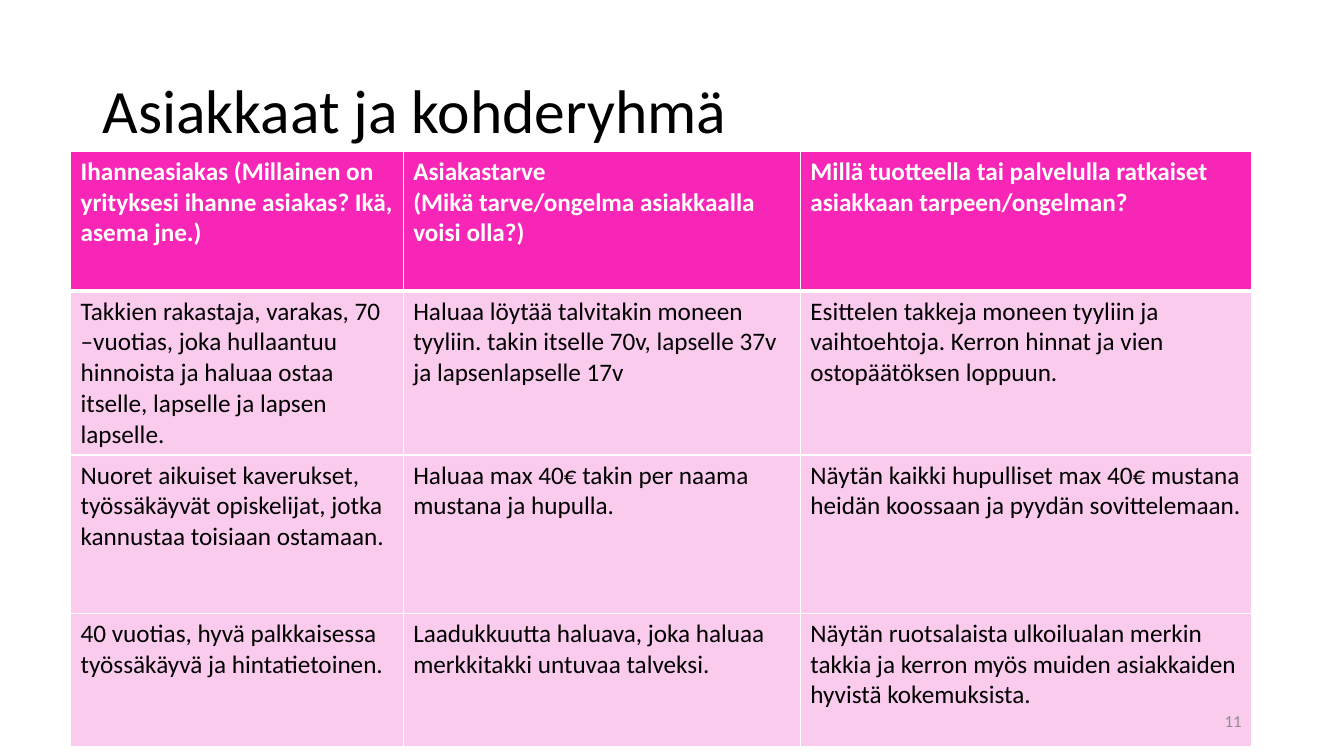
from lxml.etree import SubElement
from pptx import Presentation
from pptx.dml.color import RGBColor
from pptx.enum.text import MSO_ANCHOR, PP_ALIGN
from pptx.oxml.ns import qn
from pptx.util import Pt

WHITE = RGBColor(0xFF, 0xFF, 0xFF)
BLACK = RGBColor(0x00, 0x00, 0x00)
GREY = RGBColor(0x8C, 0x8C, 0x8C)
PINK = RGBColor(0xF8, 0x26, 0xB7)
PALE = RGBColor(0xFB, 0xCB, 0xEE)

FACE = "Calibri"
TITLE = {"name": FACE, "size": Pt(44), "bold": False}
HEAD = {"name": FACE, "size": Pt(18), "bold": True}
BODY = {"name": FACE, "size": Pt(18), "bold": False}
PAGE = {"name": FACE, "size": Pt(12), "bold": False}

COLS = (237.6, 283.7, 322.6)
ROWS = (100, 113, 113, 95)
CELLS = (
    ("Ihanneasiakas (Millainen on yrityksesi ihanne asiakas? Ikä, asema jne.)",
     "Asiakastarve\n(Mikä tarve/ongelma asiakkaalla voisi olla?)",
     "Millä tuotteella tai palvelulla ratkaiset asiakkaan tarpeen/ongelman?"),
    ("Takkien rakastaja, varakas, 70 –vuotias, joka hullaantuu hinnoista "
     "ja haluaa ostaa itselle, lapselle ja lapsen lapselle.",
     "Haluaa löytää talvitakin moneen tyyliin. takin itselle 70v, "
     "lapselle 37v ja lapsenlapselle 17v",
     "Esittelen takkeja moneen tyyliin ja vaihtoehtoja. Kerron hinnat "
     "ja vien ostopäätöksen loppuun."),
    ("Nuoret aikuiset kaverukset, työssäkäyvät opiskelijat, jotka "
     "kannustaa toisiaan ostamaan.",
     "Haluaa max 40€ takin per naama mustana ja hupulla.",
     "Näytän kaikki hupulliset max 40€ mustana heidän koossaan ja "
     "pyydän sovittelemaan."),
    ("40 vuotias, hyvä palkkaisessa työssäkäyvä ja hintatietoinen.",
     "Laadukkuutta haluava, joka haluaa merkkitakki untuvaa talveksi.",
     "Näytän ruotsalaista ulkoilualan merkin takkia ja kerron myös "
     "muiden asiakkaiden hyvistä kokemuksista."),
)


def style(frame, look, color):
    """Apply a font look and a colour to all text in a frame."""
    for para in frame.paragraphs:
        for run in para.runs:
            for key, value in look.items():
                setattr(run.font, key, value)
            run.font.color.rgb = color


def edge(cell, widths):
    """Draw white cell borders of the given widths in points."""
    props = cell._tc.get_or_add_tcPr()
    for spot, (side, width) in enumerate(widths.items()):
        line = SubElement(props, qn(f"a:ln{side}"), w=str(Pt(width)))
        fill = SubElement(line, qn("a:solidFill"))
        SubElement(fill, qn("a:srgbClr"), val=str(WHITE))
        props.insert(spot, line)


def add_title(slide, text, left, top, width, height):
    """Place and format the title in its box."""
    title = slide.shapes.title
    box = {"left": left, "top": top, "width": width, "height": height}
    for key, value in box.items():
        setattr(title, key, Pt(value))
    frame = title.text_frame
    frame.text = text
    frame.vertical_anchor = MSO_ANCHOR.MIDDLE
    para = frame.paragraphs[0]
    para.alignment = PP_ALIGN.LEFT
    para.line_spacing = 0.9
    style(frame, TITLE, BLACK)


def add_grid(slide, left, top):
    """Build the customer table from its top left corner."""
    table = slide.shapes.add_table(
        len(ROWS), len(COLS), Pt(left), Pt(top),
        Pt(sum(COLS)), Pt(sum(ROWS))).table
    for col, width in zip(table.columns, COLS):
        col.width = Pt(width)
    for row, height in zip(table.rows, ROWS):
        row.height = Pt(height)
    for r, texts in enumerate(CELLS):
        look, ink, back = (BODY, BLACK, PALE) if r else (HEAD, WHITE, PINK)
        for c, text in enumerate(texts):
            cell = table.cell(r, c)
            cell.text = text
            cell.fill.solid()
            cell.fill.fore_color.rgb = back
            style(cell.text_frame, look, ink)
            edge(cell, {"L": 1, "R": 1, "T": 3 if r == 1 else 1,
                        "B": 1 if r else 3})


def add_page(slide, text, left, top, width, height):
    """Put the page number at the right of its box."""
    box = slide.shapes.add_textbox(Pt(left), Pt(top), Pt(width), Pt(height))
    frame = box.text_frame
    frame.word_wrap = True
    frame.vertical_anchor = MSO_ANCHOR.MIDDLE
    frame.text = text
    frame.paragraphs[0].alignment = PP_ALIGN.RIGHT
    style(frame, PAGE, GREY)


def main():
    """Build the slide and save it."""
    deck = Presentation()
    deck.slide_width, deck.slide_height = Pt(960), Pt(540)
    slide = deck.slides.add_slide(deck.slide_layouts[5])
    add_title(slide, "Asiakkaat ja kohderyhmä", 66, 28.8, 828, 104.4)
    add_grid(slide, 50.4, 108)
    add_page(slide, "11", 678, 500.5, 216, 28.8)
    deck.save("out.pptx")


if __name__ == "__main__":
    main()
